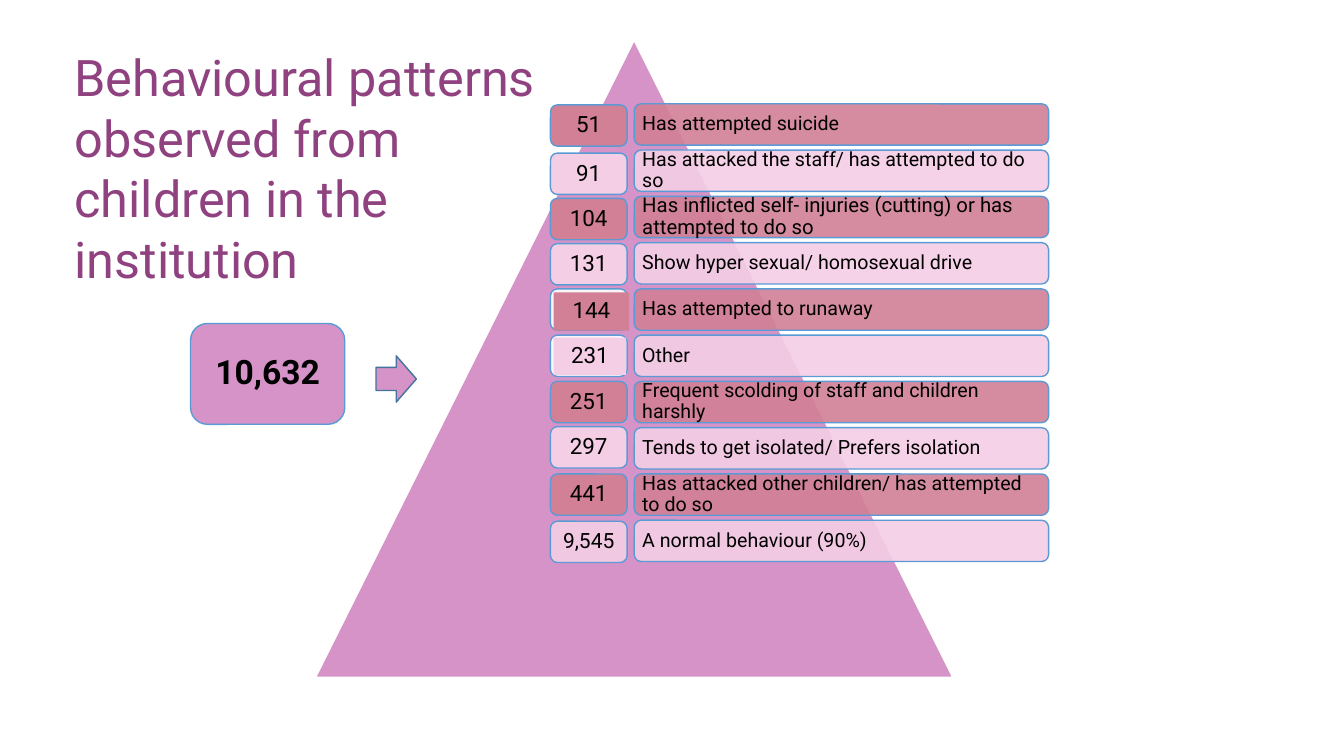
"""Build a slide of behavioural patterns observed from children in an institution."""
from lxml import etree
from pptx import Presentation
from pptx.dml.color import RGBColor
from pptx.enum.shapes import MSO_SHAPE
from pptx.enum.text import MSO_ANCHOR, MSO_AUTO_SIZE, PP_ALIGN
from pptx.oxml.ns import qn
from pptx.util import Inches, Pt

TRIANGLE, ROUNDED = MSO_SHAPE.ISOSCELES_TRIANGLE, MSO_SHAPE.ROUNDED_RECTANGLE
RECTANGLE, ARROW = MSO_SHAPE.RECTANGLE, MSO_SHAPE.RIGHT_ARROW
LEFT, CENTER = PP_ALIGN.LEFT, PP_ALIGN.CENTER
MIDDLE, GROW = MSO_ANCHOR.MIDDLE, MSO_AUTO_SIZE.SHAPE_TO_FIT_TEXT

FONT = "Roboto"
COLORS = {
    "orchid": "D593C7", "rose": "D18096", "blush": "F4CEE5", "plum": "8F4180",
    "blue": "5B9BD5", "steel": "43739E", "white": "FFFFFF", "black": "000000",
}
TITLE = "Behavioural patterns observed from children in the institution"
TOTAL = "10,632"
# Each row holds count, label, label size and the count's vertical offset.
ROWS = [
    ("51", "Has attempted suicide", 14, 0.01),
    ("91", "Has attacked the staff/ has attempted to do so", 14, 0.03),
    ("104", "Has inflicted self- injuries (cutting) or has attempted to do so", 14.5, 0.02),
    ("131", "Show hyper sexual/ homosexual drive", 14, 0.01),
    ("144", "Has attempted to runaway", 14, 0),
    ("231", "Other", 14, 0),
    ("251", "Frequent scolding of staff and children harshly", 14, 0),
    ("297", "Tends to get isolated/ Prefers isolation", 14, -0.01),
    ("441", "Has attacked other children/ has attempted to do so", 14, 0),
    ("9,545", "A normal behaviour (90%)", 14, 0.01),
]
FRAMED = {"144": (5.49, 2.9, 0.75, 0.38), "231": (5.49, 3.35, 0.72, 0.37)}
COUNT_SIZES = {"9,545": 15}
ROW_TOP, ROW_PITCH, ROW_HEIGHT = 1.03, 0.459, 0.41
COUNT_LEFT, COUNT_WIDTH = 5.46, 0.76
LABEL_LEFT, LABEL_WIDTH = 6.29, 4.11


def color(name):
    return RGBColor.from_string(COLORS[name])


def add_block(slide, kind, box, fill, line=None, alpha=100):
    shape = slide.shapes.add_shape(kind, *map(Inches, box))
    shape.shadow.inherit = False
    shape.fill.solid()
    shape.fill.fore_color.rgb = color(fill)
    if alpha < 100:
        fill_color = shape.fill._xPr.find(qn("a:solidFill"))[0]
        etree.SubElement(fill_color, qn("a:alpha"), val=str(alpha * 1000))
    if line:
        shape.line.color.rgb = color(line)
        shape.line.width = Pt(1)
    else:
        shape.line.fill.background()
    return shape


def write(shape, text, size, align=CENTER, inset=0.06, bold=False):
    frame = shape.text_frame
    frame.word_wrap = True
    frame.vertical_anchor = MIDDLE
    frame.margin_left = frame.margin_right = Inches(inset)
    frame.margin_top = frame.margin_bottom = Inches(inset)
    paragraph = frame.paragraphs[0]
    paragraph.text = text
    paragraph.alignment = align
    paragraph.line_spacing = 0.9
    style(paragraph, size, "black", bold)


def style(paragraph, size, color_name, bold=False):
    font = paragraph.font
    font.name, font.size, font.bold = FONT, Pt(size), bold
    font.color.rgb = color(color_name)


def add_labels(slide):
    for index, (_, label, size, _) in enumerate(ROWS):
        box = (LABEL_LEFT, ROW_TOP + index * ROW_PITCH, LABEL_WIDTH, ROW_HEIGHT)
        fill = ("rose", "blush")[index % 2]
        write(add_block(slide, ROUNDED, box, fill, "blue", 90), label, size, LEFT)


def add_counts(slide):
    for index, (count, _, _, offset) in enumerate(ROWS):
        top = ROW_TOP + index * ROW_PITCH + offset
        box = (COUNT_LEFT, top, COUNT_WIDTH, ROW_HEIGHT)
        fill = ("rose", "blush")[index % 2]
        if count in FRAMED:
            add_block(slide, ROUNDED, box, "white", "blue", 90)
            badge = add_block(slide, RECTANGLE, FRAMED[count], fill)
        else:
            alpha = 90 if index == len(ROWS) - 1 else 100
            badge = add_block(slide, ROUNDED, box, fill, "blue", alpha)
        write(badge, count, COUNT_SIZES.get(count, 16))


def add_title(slide):
    title = slide.shapes.add_textbox(*map(Inches, (0.64, 0.41, 4.86, 2.52)))
    frame = title.text_frame
    frame.word_wrap = True
    frame.auto_size = GROW
    frame.text = TITLE
    style(frame.paragraphs[0], 36, "plum")


def main():
    presentation = Presentation()
    presentation.slide_width, presentation.slide_height = Inches(13.33), Inches(7.5)
    slide = presentation.slides.add_slide(presentation.slide_layouts[6])
    add_block(slide, TRIANGLE, (3.13, 0.4, 6.32, 6.32), "orchid", "white")
    add_labels(slide)
    add_counts(slide)
    add_title(slide)
    total = add_block(slide, ROUNDED, (1.89, 3.21, 1.53, 1), "orchid", "blue")
    write(total, TOTAL, 24, bold=True)
    add_block(slide, ARROW, (3.73, 3.53, 0.4, 0.46), "orchid", "steel")
    presentation.save("out.pptx")


if __name__ == "__main__":
    main()
